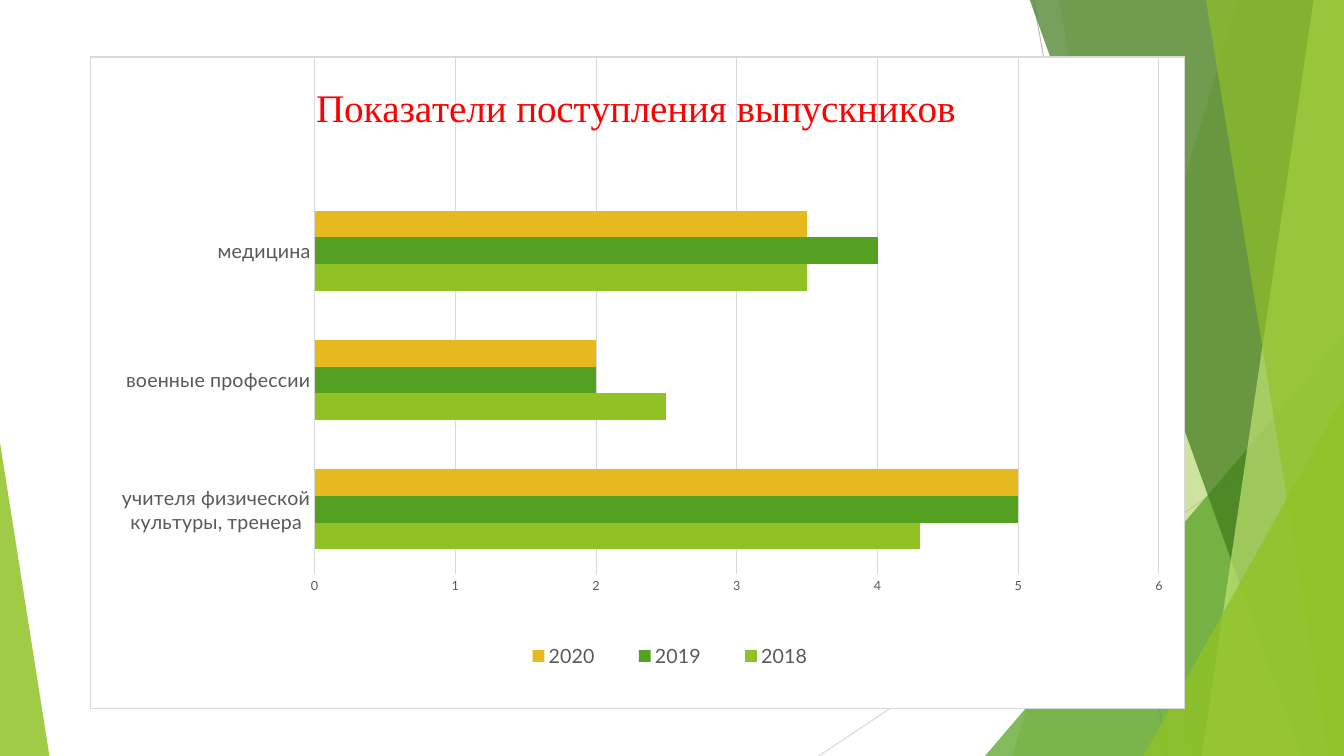
from lxml.etree import SubElement
from pptx import Presentation
from pptx.chart.data import CategoryChartData
from pptx.dml.color import RGBColor
from pptx.enum.chart import XL_CHART_TYPE, XL_LEGEND_POSITION, XL_TICK_MARK
from pptx.enum.shapes import MSO_CONNECTOR, MSO_SHAPE
from pptx.oxml import parse_xml
from pptx.oxml.ns import nsdecls, qn
from pptx.util import Inches, Pt

COLORS = {
    "lime": "90C226",
    "green": "54A021",
    "forest": "3F7819",
    "pale": "C0E474",
    "gold": "E6B91E",
    "red": "FF0000",
    "text": "595959",
    "gray": "BFBFBF",
    "light": "D9D9D9",
    "white": "FFFFFF",
}
WIDTH, HEIGHT, TOP = 13.33, 7.5, -0.01
CATEGORIES = ["учителя физической культуры, тренера", "военные профессии", "медицина", ""]
SERIES = [
    ("2018", (4.3, 2.5, 3.5, None), "lime"),
    ("2019", (5, 2, 4, None), "green"),
    ("2020", (5, 2, 3.5, None), "gold"),
]


def rgb(name):
    return RGBColor.from_string(COLORS[name])


def set_layout(parent, position, **values):
    """Give a chart part a manual layout, as fractions of the chart."""
    for old in parent.findall(qn("c:layout")):
        parent.remove(old)
    layout = parse_xml(f'<c:layout {nsdecls("c")}><c:manualLayout/></c:layout>')
    for tag, value in values.items():
        SubElement(layout[0], qn(f"c:{tag}")).set("val", str(value))
    parent.insert(position, layout)


class SlideBuilder:
    font = "Lato"

    def __init__(self, slide):
        self.slide = slide
        self.shapes = slide.shapes

    def line(self, start, end, color):
        points = [Inches(value) for value in (*start, *end)]
        connector = self.shapes.add_connector(MSO_CONNECTOR.STRAIGHT, *points)
        connector.line.color.rgb = rgb(color)
        connector.line.width = Pt(0.75)
        SubElement(connector._element.spPr, qn("a:effectLst"))

    def paint(self, shape, color, opacity):
        shape.shadow.inherit = False
        shape.line.fill.background()
        shape.fill.solid()
        shape.fill.fore_color.rgb = rgb(color)
        color_element = shape._element.spPr.find(qn("a:solidFill"))[0]
        SubElement(color_element, qn("a:alpha")).set("val", str(opacity * 1000))

    def band(self, top_left, bottom_left, color, opacity):
        """Full-height band whose right side is the slide edge."""
        corners = [(WIDTH, TOP), (WIDTH, HEIGHT), (bottom_left, HEIGHT)]
        builder = self.shapes.build_freeform(Inches(top_left), Inches(TOP))
        builder.add_line_segments([(Inches(x), Inches(y)) for x, y in corners])
        self.paint(builder.convert_to_shape(), color, opacity)

    def triangle(self, left, top, width, apex, color, opacity):
        """Triangle standing on the bottom edge of the slide."""
        box = [Inches(value) for value in (left, top, width, HEIGHT - top)]
        shape = self.shapes.add_shape(MSO_SHAPE.ISOSCELES_TRIANGLE, *box)
        shape.adjustments[0] = apex
        self.paint(shape, color, opacity)

    def style_font(self, font, size, color, name=None):
        font.name = name or self.font
        font.size = Pt(size)
        font.bold = False
        font.color.rgb = rgb(color)

    def bar_chart(self, box, title):
        data = CategoryChartData()
        data.categories = CATEGORIES
        for name, values, _ in SERIES:
            data.add_series(name, values)
        chart = self.shapes.add_chart(
            XL_CHART_TYPE.BAR_CLUSTERED, *[Inches(value) for value in box], data
        ).chart
        self.style_font(chart.font, 10, "text")
        self.style_frame(chart)
        self.style_title(chart, title)
        self.style_axes(chart)
        self.style_legend(chart)

        plot = chart.plots[0]
        plot.gap_width = 182
        plot.vary_by_categories = False
        for series, (_, _, color) in zip(plot.series, SERIES):
            series.format.fill.solid()
            series.format.fill.fore_color.rgb = rgb(color)
        set_layout(chart._chartSpace.chart.plotArea, 0, layoutTarget="inner",
                   xMode="edge", yMode="edge", x=0.205, y=0, w=0.772, h=0.794)

    def style_frame(self, chart):
        frame = parse_xml(
            f'<c:spPr {nsdecls("c", "a")}>'
            f'<a:solidFill><a:srgbClr val="{COLORS["white"]}"/></a:solidFill>'
            f'<a:ln w="{Pt(0.75)}"><a:solidFill><a:srgbClr val="{COLORS["light"]}"/>'
            "</a:solidFill></a:ln></c:spPr>"
        )
        chart._chartSpace.chart.addnext(frame)

    def style_title(self, chart, title):
        chart.has_title = True
        text_frame = chart.chart_title.text_frame
        text_frame.text = title
        self.style_font(text_frame.paragraphs[0].font, 28, "red", "Times New Roman")
        set_layout(chart.chart_title._element, 1,
                   xMode="edge", yMode="edge", x=0.2, y=0.03)

    def style_axes(self, chart):
        category_axis, value_axis = chart.category_axis, chart.value_axis
        for axis, size in ((category_axis, 14), (value_axis, 9)):
            axis.major_tick_mark = axis.minor_tick_mark = XL_TICK_MARK.NONE
            self.style_font(axis.tick_labels.font, size, "text")
        value_axis.minimum_scale, value_axis.maximum_scale = 0, 6
        value_axis.major_unit = 1
        value_axis.format.line.fill.background()
        value_axis.has_major_gridlines = True
        for line in (category_axis.format.line, value_axis.major_gridlines.format.line):
            line.color.rgb = rgb("light")
            line.width = Pt(0.75)

    def style_legend(self, chart):
        chart.has_legend = True
        legend = chart.legend
        legend.position = XL_LEGEND_POSITION.BOTTOM
        legend.include_in_layout = False
        self.style_font(legend.font, 14, "text")
        set_layout(legend._element, 1, xMode="edge", yMode="edge",
                   x=0.37, y=0.88, w=0.32, h=0.08)


def main():
    presentation = Presentation()
    presentation.slide_width = Inches(WIDTH)
    presentation.slide_height = Inches(HEIGHT)
    builder = SlideBuilder(presentation.slides.add_slide(presentation.slide_layouts[6]))

    builder.line((10.25, 0), (11.58, HEIGHT), "gray")
    builder.line((WIDTH, 4.03), (8.12, HEIGHT), "light")
    builder.band(12.28, 10.04, "lime", 30)
    builder.band(10.5, 11.83, "lime", 20)
    builder.triangle(9.77, 3.33, 3.56, 1, "green", 72)
    builder.band(10.21, 12.91, "forest", 70)
    builder.band(13.03, 11.92, "pale", 70)
    builder.band(11.96, 13.18, "lime", 65)
    builder.triangle(11.34, 3.93, 1.99, 1, "lime", 80)
    builder.triangle(0, 4.39, 0.49, 0, "lime", 85)
    builder.bar_chart((0.89, 0.56, 10.86, 6.47), "Показатели поступления выпускников")
    presentation.save("out.pptx")


if __name__ == "__main__":
    main()
